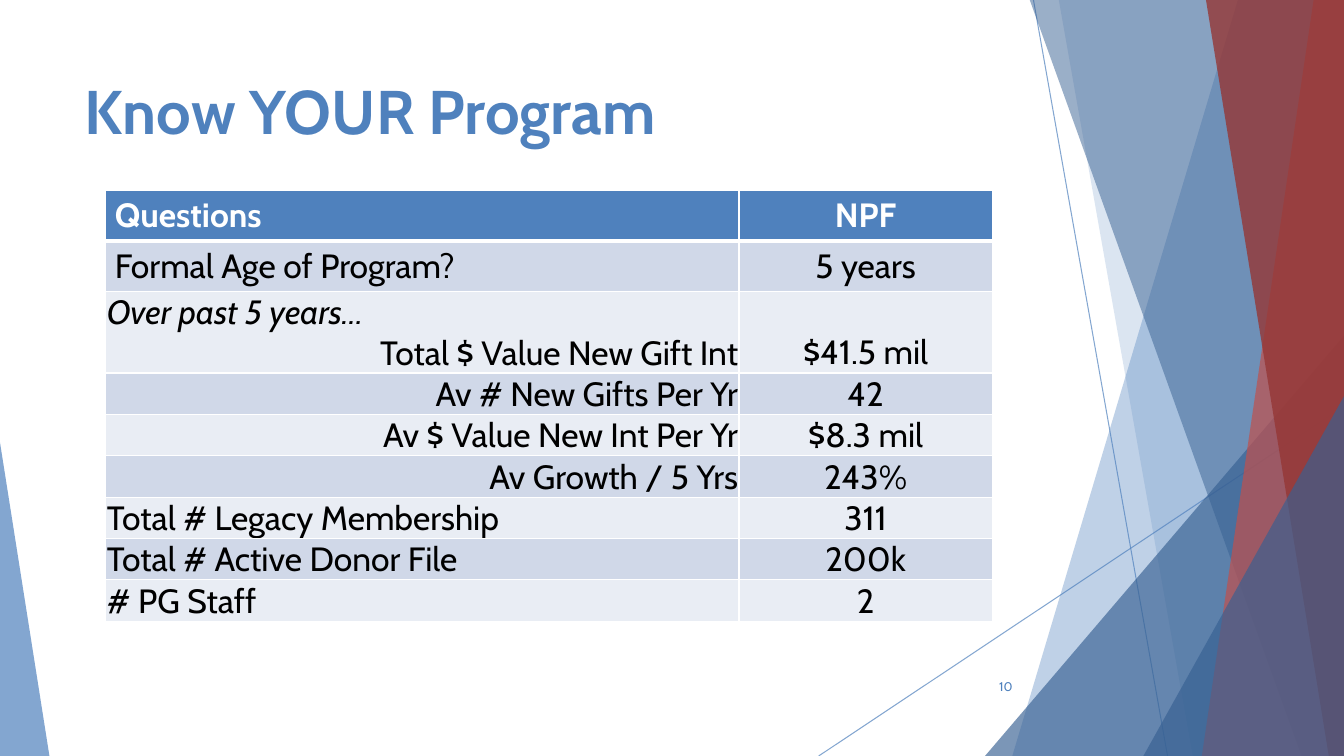
from lxml import etree
from pptx import Presentation
from pptx.dml.color import RGBColor
from pptx.enum import shapes, text
from pptx.oxml import ns
from pptx.util import Emu, Pt

PX = 9144
WIDTH, HEIGHT = 1333, 750
FONT = "Cabin"
BLUE = RGBColor(0x4F, 0x81, 0xBD)
NAVY = RGBColor(0x37, 0x60, 0x92)
RED = RGBColor(0xC0, 0x50, 0x4D)
MAROON = RGBColor(0x95, 0x37, 0x35)
BAND_DARK = RGBColor(0xD0, 0xD8, 0xE8)
BAND_LIGHT = RGBColor(0xE9, 0xED, 0xF4)
WHITE = RGBColor(0xFF, 0xFF, 0xFF)
BLACK = RGBColor(0, 0, 0)
LEFT, CENTER, RIGHT = text.PP_ALIGN.LEFT, text.PP_ALIGN.CENTER, text.PP_ALIGN.RIGHT
TOP, MIDDLE, BOTTOM = text.MSO_ANCHOR.TOP, text.MSO_ANCHOR.MIDDLE, text.MSO_ANCHOR.BOTTOM


def px(*lengths):
    return [Emu(length * PX) for length in lengths]


def set_alpha(element, percent):
    color = next(element.iter(ns.qn("a:srgbClr")))
    etree.SubElement(color, ns.qn("a:alpha"), val=str(percent * 1000))


class SlidePainter:
    def __init__(self, slide, font):
        self.slide = slide
        self.font = font

    def style_paragraph(self, paragraph, size, color, align=LEFT, bold=False, italic=False):
        paragraph.alignment = align
        for run in paragraph.runs:
            run.font.name = self.font
            run.font.size = Pt(size)
            run.font.color.rgb = color
            run.font.bold = bold
            run.font.italic = italic

    def line(self, x1, y1, x2, y2, color, alpha):
        ray = self.slide.shapes.add_connector(shapes.MSO_CONNECTOR.STRAIGHT, *px(x1, y1, x2, y2))
        ray.line.color.rgb = color
        ray.line.width = Pt(0.75)
        set_alpha(ray.line._ln, alpha)
        etree.SubElement(ray._element.spPr, ns.qn("a:effectLst"))

    def paint(self, shape, color, alpha):
        shape.shadow.inherit = False
        shape.fill.solid()
        shape.fill.fore_color.rgb = color
        shape.line.fill.background()
        set_alpha(shape._element.spPr, alpha)

    def facet(self, top_x, bottom_x, color, alpha):
        builder = self.slide.shapes.build_freeform(top_x, -1, scale=PX)
        builder.add_line_segments([(WIDTH, -1), (WIDTH, HEIGHT), (bottom_x, HEIGHT)])
        self.paint(builder.convert_to_shape(), color, alpha)

    def triangle(self, left, top, width, apex, color, alpha):
        box = px(left, top, width, HEIGHT - top)
        shape = self.slide.shapes.add_shape(shapes.MSO_SHAPE.ISOSCELES_TRIANGLE, *box)
        shape.adjustments[0] = apex
        self.paint(shape, color, alpha)

    def label(self, left, top, width, height, words, size, color, anchor=TOP, **style):
        frame = self.slide.shapes.add_textbox(*px(left, top, width, height)).text_frame
        frame.word_wrap = True
        frame.vertical_anchor = anchor
        frame.text = words
        self.style_paragraph(frame.paragraphs[0], size, color, **style)

    def border(self, cell, side, width):
        tc_pr = cell._tc.get_or_add_tcPr()
        edge = etree.SubElement(tc_pr, ns.qn(f"a:ln{side}"), w=str(Pt(width)))
        fill = etree.SubElement(edge, ns.qn("a:solidFill"))
        etree.SubElement(fill, ns.qn("a:srgbClr"), val=str(WHITE))

    def cell(self, cell, lines, row, align):
        header = row == 0
        roomy = row < 2
        for side in "LRTB":
            thick = (side == "B" and row == 0) or (side == "T" and row == 1)
            self.border(cell, side, 3 if thick else 1)
        cell.fill.solid()
        cell.fill.fore_color.rgb = BLUE if header else BAND_DARK if row % 2 else BAND_LIGHT
        cell.vertical_anchor = TOP if roomy else BOTTOM
        margins = px(9, 5, 9, 5) if roomy else px(1, 1, 1, 0)
        cell.margin_left, cell.margin_top, cell.margin_right, cell.margin_bottom = margins
        cell.text_frame.text = "\n".join(lines)
        for paragraph in cell.text_frame.paragraphs:
            intro = paragraph.text.endswith("…")
            self.style_paragraph(paragraph, 24, WHITE if header else BLACK,
                                 LEFT if intro else align, bold=header, italic=intro)

    def table(self, left, top, widths, heights, rows):
        box = px(left, top, sum(widths), sum(heights))
        grid = self.slide.shapes.add_table(len(rows), len(widths), *box).table
        for column, width in zip(grid.columns, px(*widths)):
            column.width = width
        for grid_row, height in zip(grid.rows, px(*heights)):
            grid_row.height = height
        for index, (question, answer, align) in enumerate(rows):
            self.cell(grid.cell(index, 0), question, index, align)
            self.cell(grid.cell(index, 1), [answer], index, CENTER)


QUESTIONS = [
    (["Questions"], "NPF", LEFT),
    (["Formal Age of Program?"], "5 years", LEFT),
    (["Over past 5 years…", "Total $ Value New Gift Int"], "$41.5 mil", RIGHT),
    (["Av # New Gifts Per Yr"], "42", RIGHT),
    (["Av $ Value New Int Per Yr"], "$8.3 mil", RIGHT),
    (["Av Growth / 5 Yrs"], "243%", RIGHT),
    (["Total # Legacy Membership"], "311", LEFT),
    (["Total # Active Donor File"], "200k", LEFT),
    (["# PG Staff"], "2", LEFT),
]


def main():
    deck = Presentation()
    deck.slide_width, deck.slide_height = px(WIDTH, HEIGHT)
    painter = SlidePainter(deck.slides.add_slide(deck.slide_layouts[6]), FONT)

    painter.line(1025, 0, 1158, HEIGHT, BLUE, 70)
    painter.line(WIDTH, 403, 812, HEIGHT, BLUE, 70)
    painter.facet(1228, 1004, BLUE, 36)
    painter.facet(1050, 1183, BLUE, 20)
    painter.triangle(977, 333, 356, 1, NAVY, 66)
    painter.facet(1021, 1291, NAVY, 50)
    painter.facet(1303, 1192, RED, 70)
    painter.facet(1196, 1318, MAROON, 80)
    painter.triangle(1134, 393, 199, 1, NAVY, 66)
    painter.triangle(0, 439, 49, 0, BLUE, 70)

    painter.label(74, 67, 940, 144, "Know YOUR Program", 44, BLUE, bold=True)
    painter.label(939, 661, 75, 40, "10", 9, BLUE, anchor=MIDDLE, align=RIGHT)
    painter.table(105, 189, [628, 251], [49, 49, 78] + [41] * 6, QUESTIONS)

    deck.save("out.pptx")


if __name__ == "__main__":
    main()
